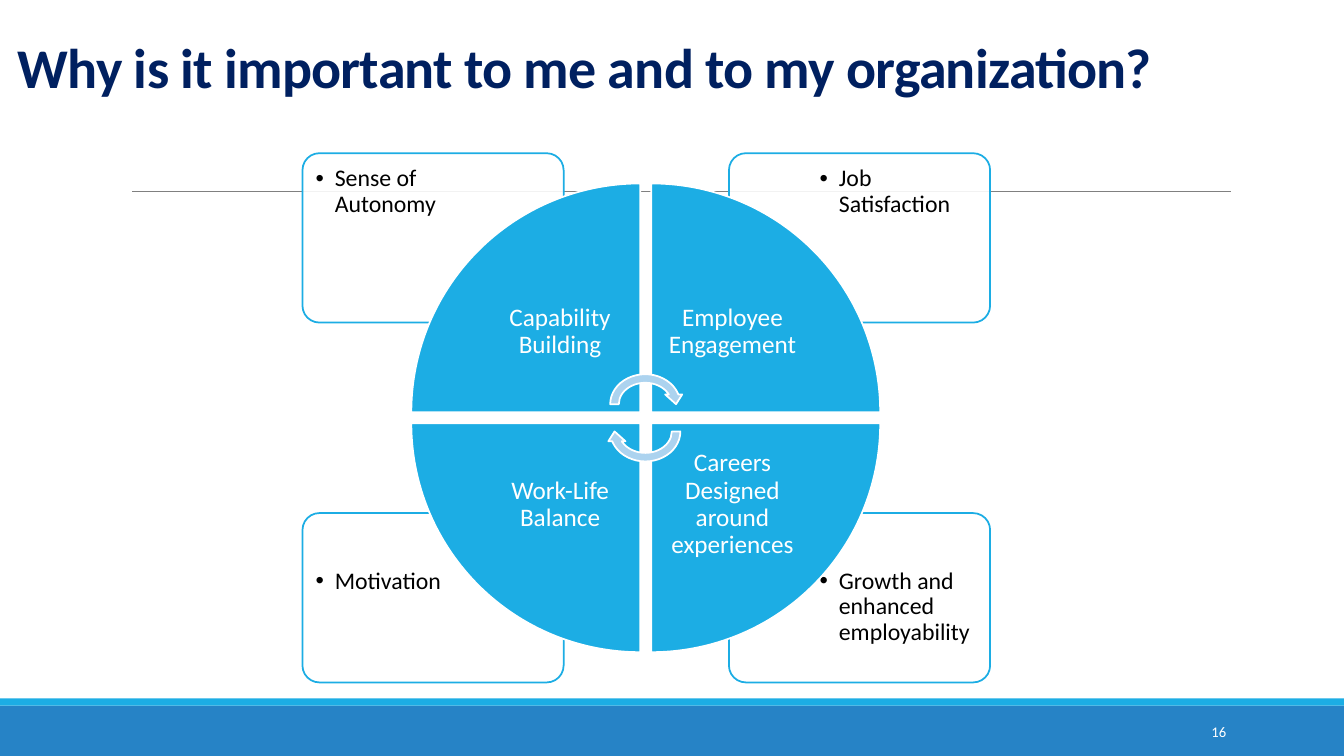
from lxml import etree
from pptx import Presentation
from pptx import util as u
from pptx.dml.color import RGBColor
from pptx.enum import shapes, text
from pptx.oxml import ns

SHAPE = shapes.MSO_SHAPE
ALIGN = text.PP_ALIGN
ANCHOR = text.MSO_ANCHOR


def color(code):
    return RGBColor.from_string(code)


def child(node, tag, **attrs):
    return etree.SubElement(node, ns.qn(tag), attrs)


class Deck:
    font = "Calibri"
    cyan, blue, pale = "1CADE4", "2683C6", "ACD3EF"
    navy, white, black, gray = "002060", "FFFFFF", "000000", "808080"

    def __init__(self, wide, high):
        self.file = Presentation()
        self.file.slide_width = u.Inches(wide)
        self.file.slide_height = u.Inches(high)
        self.slide = self.file.slides.add_slide(self.file.slide_layouts[6])

    def shape(self, kind, box, fill, edge=None, turn=0, alpha=None):
        item = self.slide.shapes.add_shape(kind, *map(u.Inches, box))
        item.shadow.inherit = False
        item.rotation = turn
        item.fill.solid()
        item.fill.fore_color.rgb = color(fill)
        if alpha:
            tint = item.fill._xPr.find(".//" + ns.qn("a:srgbClr"))
            child(tint, "a:alpha", val=str(alpha * 1000))
        if edge:
            item.line.color.rgb = color(edge)
            item.line.width = u.Pt(1.25)
        else:
            item.line.fill.background()
        return item

    def rule(self, left, right, top):
        ends = map(u.Inches, (left, top, right, top))
        line = self.slide.shapes.add_connector(shapes.MSO_CONNECTOR.STRAIGHT, *ends)
        line.line.color.rgb = color(self.gray)
        line.line.width = u.Pt(0.5)
        child(line._element.spPr, "a:effectLst")

    def label(self, box, words, size, tint, align=ALIGN.LEFT, anchor=ANCHOR.MIDDLE,
              inset=None, space=1.0, bold=False, bullet=False, track=None):
        frame = self.slide.shapes.add_textbox(*map(u.Inches, box)).text_frame
        frame.word_wrap = True
        frame.vertical_anchor = anchor
        if inset is not None:
            frame.margin_left = frame.margin_right = u.Inches(inset)
            frame.margin_top = frame.margin_bottom = u.Inches(inset)
        para = frame.paragraphs[0]
        run = para.add_run()
        run.text = words
        para.alignment = align
        para.line_spacing = space
        if bullet:
            props = para._p.get_or_add_pPr()
            hang = u.Inches(0.19)
            props.set("marL", str(hang))
            props.set("indent", str(-hang))
            child(props, "a:buFont", typeface="Arial")
            child(props, "a:buChar", char="•")
        if track:
            run._r.get_or_add_rPr().set("spc", str(track))
        font = para.font
        font.name, font.size, font.bold = self.font, u.Pt(size), bold
        font.color.rgb = color(tint)

    def card(self, left, top):
        item = self.shape(SHAPE.ROUNDED_RECTANGLE, (left, top, 2.59, 1.68),
                          self.white, self.cyan, alpha=90)
        item.adjustments[0] = 0.1

    def note(self, left, top, words):
        self.label((left, top, 1.74, 1.18), words, 17, self.black,
                   anchor=ANCHOR.TOP, inset=0.09, space=0.9, bullet=True)

    def wedge(self, left, top, turn):
        self.shape(SHAPE.PIE_WEDGE, (left, top, 2.27, 2.27),
                   self.cyan, self.white, turn)

    def theme(self, left, top, words):
        self.label((left, top, 1.61, 1.61), words, 18, self.white,
                   ALIGN.CENTER, inset=0.14, space=0.9)


def main():
    deck = Deck(13.33, 7.5)

    # Footer bands, rule, title and page number
    deck.shape(SHAPE.RECTANGLE, (0, 7, 13.33, 0.5), deck.blue)
    deck.shape(SHAPE.RECTANGLE, (0, 6.93, 13.33, 0.07), deck.cyan)
    deck.rule(1.31, 12.21, 1.9)
    deck.label((0.08, 0.22, 12.01, 0.82),
               "Why is it important to me and to my organization?", 40, deck.navy,
               anchor=ANCHOR.BOTTOM, space=0.85, bold=True, track=-50)
    deck.label((10.83, 7.06, 1.43, 0.4), "16", 10.5, deck.white, ALIGN.RIGHT)

    # Quadrants, clockwise from top left: column, row, theme, note
    parts = [
        (0, 0, "Capability Building", "Sense of Autonomy"),
        (1, 0, "Employee Engagement", "Job Satisfaction"),
        (1, 1, "Careers Designed around experiences", "Growth and enhanced employability"),
        (0, 1, "Work-Life Balance", "Motivation"),
    ]

    # Outer cards
    for col, row, theme, note in parts:
        deck.card((3, 7.23)[col], (1.52, 5.09)[row])
        deck.note((3.04, 8.04)[col], (1.56, 5.55)[row], note)

    # Wheel
    for step, (col, row, theme, note) in enumerate(parts):
        deck.wedge((4.08, 6.46)[col], (1.82, 4.2)[row], 90 * step)
        deck.theme((4.75, 6.46)[col], (2.49, 4.2)[row], theme)

    # Cycle arrows
    for top, turn in ((3.67, 0), (3.94, 180)):
        deck.shape(SHAPE.CIRCULAR_ARROW, (6.01, top, 0.78, 0.68),
                   deck.pale, deck.white, turn)

    deck.file.save("out.pptx")


if __name__ == "__main__":
    main()
